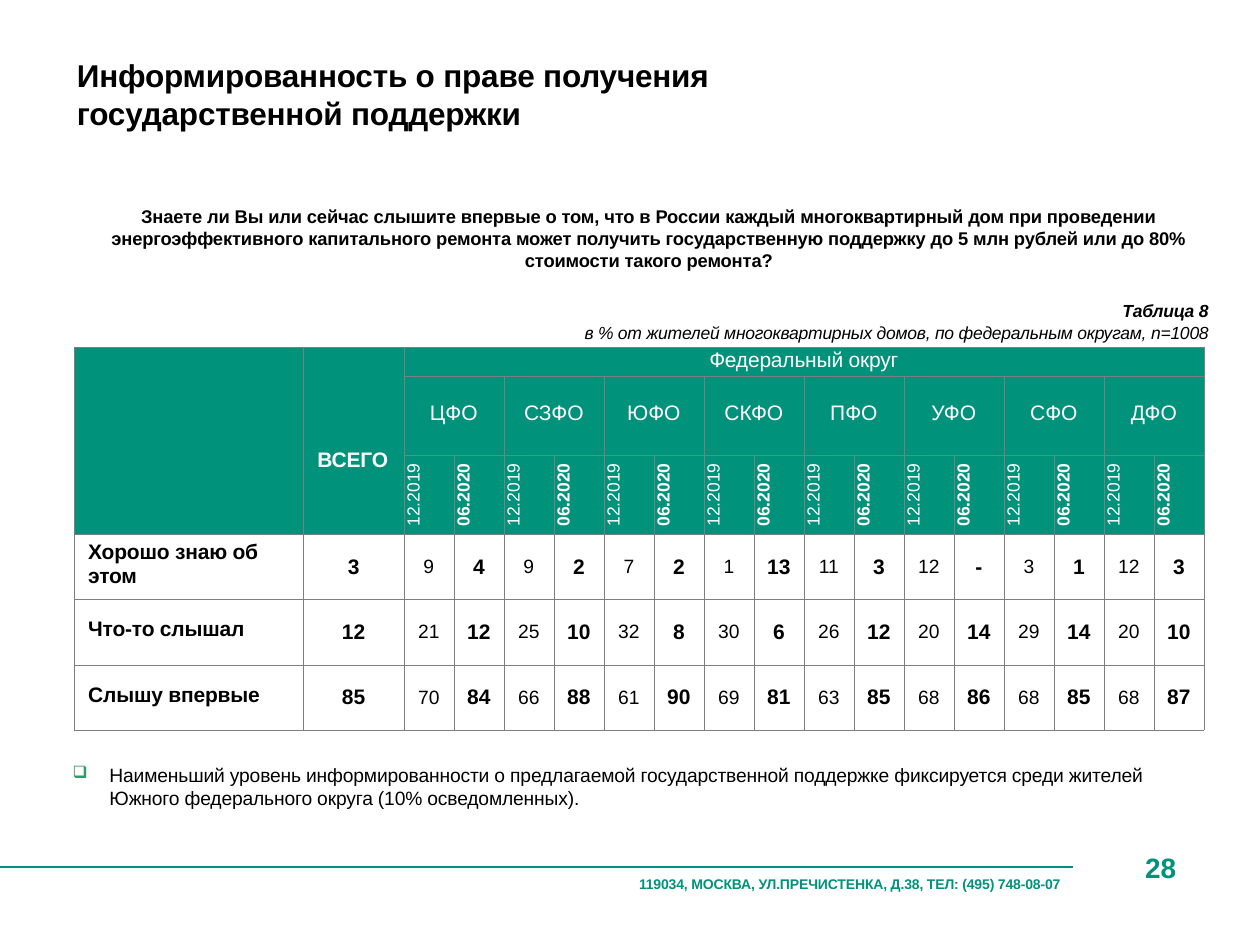
import pptx
import pptx.dml.color
import pptx.enum.shapes
import pptx.enum.text
import pptx.oxml.ns
import pptx.util
from lxml import etree

Pt = pptx.util.Pt
ALIGN = pptx.enum.text.PP_ALIGN
ANCHOR = pptx.enum.text.MSO_ANCHOR

FONT = "Arial"
GREEN = "00927A"
LINE_GREEN = "00907C"
BULLET_GREEN = "339966"
GREY = "7E7E7E"
WHITE = "FFFFFF"
BLACK = "000000"

DISTRICTS = ["ЦФО", "СЗФО", "ЮФО", "СКФО", "ПФО", "УФО", "СФО", "ДФО"]
DATES = ["12.2019", "06.2020"]
ANSWERS = [
    ("Хорошо знаю об этом", "3", "9 4 9 2 7 2 1 13 11 3 12 - 3 1 12 3"),
    ("Что-то слышал", "12", "21 12 25 10 32 8 30 6 26 12 20 14 29 14 20 10"),
    ("Слышу впервые", "85", "70 84 66 88 61 90 69 81 63 85 68 86 68 85 68 87"),
]
HEADER_ROWS = 3
LABEL_COLUMNS = 2
COLUMN_WIDTHS = [131, 57.4] + [28.6] * len(DISTRICTS) * len(DATES)
ROW_HEIGHTS = [16.6, 45.2, 45.2] + [37.3] * len(ANSWERS)


def color(hex_string):
    return pptx.dml.color.RGBColor.from_string(hex_string)


def add_element(parent, tag, **attributes):
    element = etree.SubElement(parent, pptx.oxml.ns.qn(tag))
    for name, value in attributes.items():
        element.set(name, str(value))
    return element


def write(paragraph, text, size=12, bold=False, italic=False, fill=BLACK,
          align=ALIGN.LEFT, before=0, spacing=0):
    """Add a formatted run; spacing is in hundredths of a point."""
    paragraph.alignment = align
    if before:
        paragraph.space_before = Pt(before)
    run = paragraph.add_run()
    run.text = text
    run.font.name = FONT
    run.font.size = Pt(size)
    run.font.bold = bold
    run.font.italic = italic
    run.font.color.rgb = color(fill)
    if spacing:
        run.font._element.set("spc", str(spacing))


def prepare_frame(shape, left, top, width, height, inset_top=0, wrap=True):
    """Place a text shape and return its first paragraph."""
    shape.left, shape.top = Pt(left), Pt(top)
    shape.width, shape.height = Pt(width), Pt(height)
    frame = shape.text_frame
    frame.word_wrap = wrap
    frame.auto_size = pptx.enum.text.MSO_AUTO_SIZE.NONE
    frame.vertical_anchor = ANCHOR.TOP
    frame.margin_left = frame.margin_right = frame.margin_bottom = 0
    frame.margin_top = Pt(inset_top)
    return frame.paragraphs[0]


def add_text_box(slide, *box, **options):
    shape = slide.shapes.add_textbox(0, 0, 0, 0)
    return prepare_frame(shape, *box, **options)


def add_bullet(paragraph):
    properties = paragraph._p.get_or_add_pPr()
    properties.set("marL", str(Pt(21.6)))
    properties.set("indent", str(-Pt(21)))
    add_element(add_element(properties, "a:buClr"), "a:srgbClr", val=BULLET_GREEN)
    add_element(properties, "a:buSzPct", val=88000)
    add_element(properties, "a:buChar", char="❑")


def add_footer_line(slide):
    line = slide.shapes.add_connector(
        pptx.enum.shapes.MSO_CONNECTOR.STRAIGHT, 0, Pt(495.4), Pt(613.4), Pt(495.4))
    line.line.color.rgb = color(LINE_GREEN)
    line.line.width = Pt(1.2)
    add_element(line._element.spPr, "a:effectLst")


def style_cell(cell, fill):
    """Give a cell thin grey borders, a fill and no insets."""
    properties = cell._tc.get_or_add_tcPr()
    for side in ("a:lnL", "a:lnR", "a:lnT", "a:lnB"):
        border = add_element(properties, side, w=Pt(0.25))
        add_element(add_element(border, "a:solidFill"), "a:srgbClr", val=GREY)
    if fill:
        cell.fill.solid()
        cell.fill.fore_color.rgb = color(fill)
    else:
        cell.fill.background()
    cell.margin_left = cell.margin_right = cell.margin_top = cell.margin_bottom = 0
    cell.vertical_anchor = ANCHOR.MIDDLE


def write_cell(cell, text, align=ALIGN.CENTER, left=0, top=0, bottom=0, **style):
    cell.margin_left, cell.margin_top, cell.margin_bottom = Pt(left), Pt(top), Pt(bottom)
    write(cell.text_frame.paragraphs[0], text, align=align, **style)


def fill_header(table):
    last_column = len(COLUMN_WIDTHS) - 1
    for column in range(LABEL_COLUMNS):
        table.cell(0, column).merge(table.cell(HEADER_ROWS - 1, column))
    table.cell(0, LABEL_COLUMNS).merge(table.cell(0, last_column))
    write_cell(table.cell(0, 1), "ВСЕГО", align=ALIGN.LEFT, left=8, top=22,
               bold=True, fill=WHITE, spacing=-10)
    write_cell(table.cell(0, LABEL_COLUMNS), "Федеральный округ", bottom=2,
               fill=WHITE, spacing=-10)
    for index, district in enumerate(DISTRICTS):
        first = LABEL_COLUMNS + index * len(DATES)
        table.cell(1, first).merge(table.cell(1, first + len(DATES) - 1))
        write_cell(table.cell(1, first), district, bottom=3, fill=WHITE)
        for offset, date in enumerate(DATES):
            cell = table.cell(2, first + offset)
            cell._tc.get_or_add_tcPr().set("vert", "vert270")
            write_cell(cell, date, size=10, bold=offset == 1, fill=WHITE)


def fill_answers(table):
    for row, (label, total, values) in enumerate(ANSWERS, HEADER_ROWS):
        write_cell(table.cell(row, 0), label, align=ALIGN.LEFT, left=8, bottom=3,
                   bold=True, spacing=-10)
        write_cell(table.cell(row, 1), total, bold=True)
        for index, value in enumerate(values.split()):
            latest = index % len(DATES) == 1
            write_cell(table.cell(row, LABEL_COLUMNS + index), value,
                       size=12 if latest else 11, bold=latest)


def add_awareness_table(slide):
    table = slide.shapes.add_table(
        len(ROW_HEIGHTS), len(COLUMN_WIDTHS), Pt(42.4), Pt(198.4),
        Pt(sum(COLUMN_WIDTHS)), Pt(sum(ROW_HEIGHTS))).table
    table.first_row = table.horz_banding = False
    for column, width in zip(table.columns, COLUMN_WIDTHS):
        column.width = Pt(width)
    for index, height in enumerate(ROW_HEIGHTS):
        table.rows[index].height = Pt(height)
        for cell in table.rows[index].cells:
            style_cell(cell, GREEN if index < HEADER_ROWS else None)
    fill_header(table)
    fill_answers(table)


def add_question(slide):
    paragraph = add_text_box(slide, 51.1, 115.2, 639.4, 80, inset_top=1.8)
    write(paragraph,
          "Знаете ли Вы или сейчас слышите впервые о том, что в России каждый "
          "многоквартирный дом при проведении энергоэффективного капитального "
          "ремонта может получить государственную поддержку до 5 млн рублей или "
          "до 80% стоимости такого ремонта?",
          size=10.5, bold=True, align=ALIGN.CENTER, spacing=-5)
    frame = slide.shapes[-1].text_frame
    write(frame.add_paragraph(), "Таблица 8", size=10, bold=True, italic=True,
          align=ALIGN.RIGHT, before=16.5, spacing=-10)
    write(frame.add_paragraph(),
          "в % от жителей многоквартирных домов, по федеральным округам, n=1008",
          size=10, italic=True, align=ALIGN.RIGHT, before=0.5, spacing=-10)


def main():
    presentation = pptx.Presentation()
    presentation.slide_width, presentation.slide_height = Pt(720), Pt(540)
    slide = presentation.slides.add_slide(presentation.slide_layouts[5])

    title = prepare_frame(slide.shapes.title, 43.9, 30.2, 432.7, 44.6, inset_top=1.8)
    write(title, "Информированность о праве получения государственной поддержки",
          size=18, bold=True, spacing=-10)
    add_question(slide)
    add_awareness_table(slide)

    note = add_text_box(slide, 41, 434.2, 645.1, 27.4, inset_top=2)
    add_bullet(note)
    write(note,
          "Наименьший уровень информированности о предлагаемой государственной "
          "поддержке фиксируется среди жителей Южного федерального округа "
          "(10% осведомленных).", size=11, spacing=-10)

    add_footer_line(slide)
    address = add_text_box(slide, 365.2, 500.4, 249.8, 10.8, wrap=False)
    write(address, "119034, МОСКВА, УЛ.ПРЕЧИСТЕНКА, Д.38, ТЕЛ: (495) 748-08-07",
          size=8, bold=True, fill=GREEN, spacing=-10)
    page_number = add_text_box(slide, 654.4, 486, 21, 20, wrap=False)
    write(page_number, "28", size=16, bold=True, fill=GREEN, spacing=-10)

    presentation.save("out.pptx")


if __name__ == "__main__":
    main()
